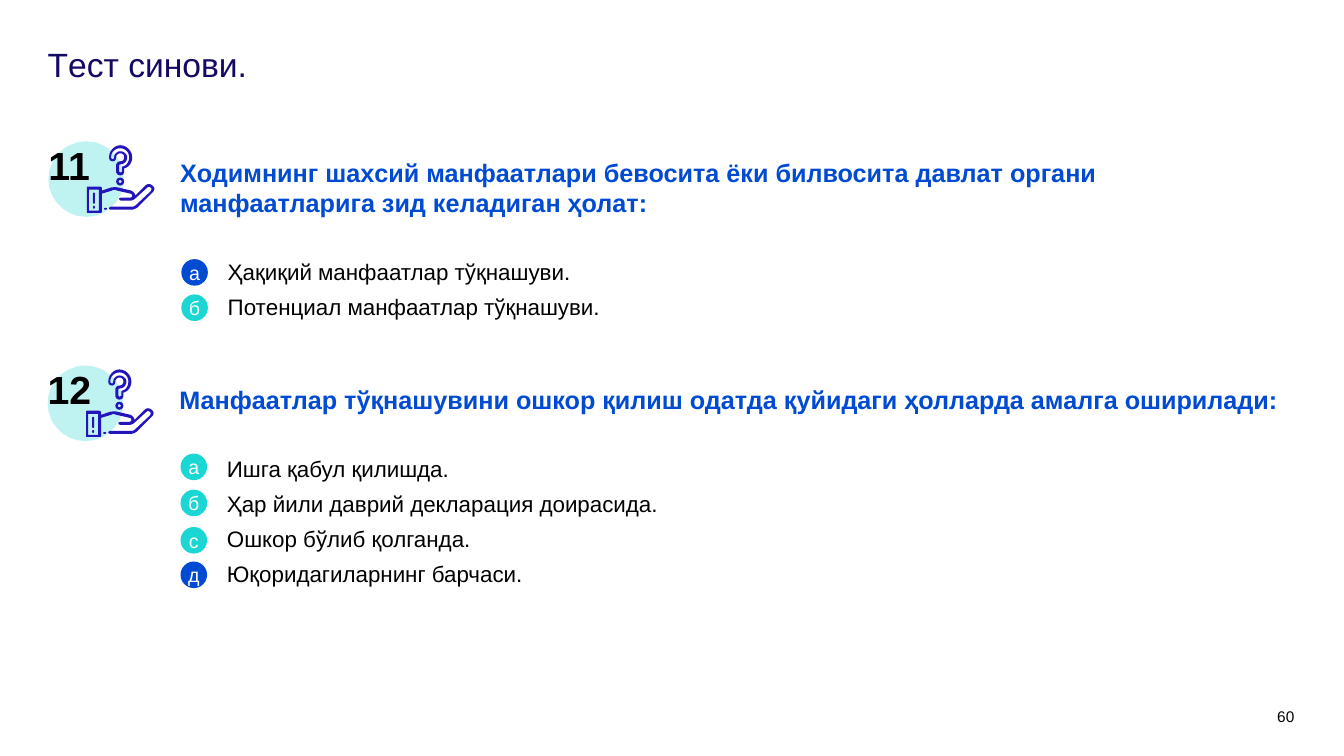
"""Build a quiz slide with two numbered questions and their lettered answers."""
import math

import pptx
import pptx.dml.color
import pptx.enum.shapes
import pptx.enum.text
import pptx.oxml
import pptx.oxml.ns
import pptx.util
from pptx.util import Cm

COLOURS = {"title": "130A65", "blue": "004BD2", "teal": "1BD7D3",
           "icon": "2414BC", "text": "000000", "white": "FFFFFF"}
SHAPES = pptx.enum.shapes.MSO_SHAPE
ALIGN = pptx.enum.text.PP_ALIGN
ANCHOR = pptx.enum.text.MSO_ANCHOR
UNIT = 0.0254
DETAIL = 10

HAND = [
    [(67, 43), (67, 42, 66, 41, 65, 40), (63, 38, 60, 38, 58, 40), (48, 50),
     (48, 48, 46, 46, 44, 45), (31, 42), (28, 41, 26, 42, 24, 42), (15, 45),
     (15, 43), (15, 42, 14, 41, 13, 41), (1, 41), (0, 41, 0, 42, 0, 43),
     (0, 66), (0, 67, 0, 67, 1, 67), (13, 67), (14, 67, 15, 67, 15, 66),
     (15, 48), (25, 45), (26, 44, 28, 44, 30, 45), (43, 48),
     (44, 48, 45, 49, 45, 50), (45, 51, 44, 52, 43, 52), (34, 52),
     (33, 52, 32, 53, 32, 53), (32, 54, 33, 55, 34, 55), (43, 55),
     (45, 55, 47, 54, 49, 52), (60, 42), (61, 41, 62, 41, 63, 42),
     (64, 42, 64, 43, 64, 44), (64, 44, 64, 45, 63, 46), (48, 60),
     (47, 61, 45, 61, 44, 61), (24, 61), (23, 61, 22, 62, 22, 63),
     (22, 63, 23, 64, 24, 64), (44, 64), (46, 64, 48, 63, 50, 62), (65, 47),
     (66, 46, 67, 45, 67, 43)],
    [(12, 65), (2, 65), (2, 44), (12, 44)],
]
QUESTION_MARK = [
    [(33, 0), (27, 0, 22, 6, 22, 12), (22, 14, 23, 16, 26, 16),
     (28, 16, 29, 14, 29, 12), (29, 10, 31, 8, 33, 8), (36, 8, 37, 10, 37, 12),
     (37, 14, 36, 16, 33, 16), (31, 16, 29, 18, 29, 20), (29, 26),
     (29, 28, 31, 30, 33, 30), (36, 30, 37, 28, 37, 26), (37, 23),
     (42, 22, 45, 17, 45, 12), (45, 6, 40, 0, 33, 0)],
    [(36, 21), (35, 21, 35, 22, 35, 22), (35, 26), (35, 26, 34, 27, 33, 27),
     (33, 27, 32, 26, 32, 26), (32, 20), (32, 19, 33, 19, 33, 19),
     (37, 19, 40, 16, 40, 12), (40, 9, 37, 6, 33, 6), (30, 6, 27, 9, 27, 12),
     (27, 13, 26, 14, 26, 14), (25, 14, 24, 13, 24, 12), (24, 7, 28, 3, 33, 3),
     (38, 3, 42, 7, 42, 12), (42, 16, 40, 20, 36, 21)],
]
ICON_DETAILS = [(SHAPES.OVAL, 17, 62, 3, 2, None), (SHAPES.OVAL, 6, 60, 2, 3, None),
                (SHAPES.DONUT, 29, 32, 8, 8, 0.31),
                (SHAPES.ROUNDED_RECTANGLE, 6, 47, 2, 11, 0.5)]

QUESTIONS = [
    {"number": "11", "left": 1.22, "top": 3.56, "heading_top": 3.84, "heading_height": 1.8,
     "heading": "Xодимнинг шаxсий манфаатлари бeвосита ёки билвосита давлат органи "
                "манфаатларига зид кeладиган ҳолат:",
     "answers_top": 6.5, "answers_height": 1.57,
     "answers": [("а", 6.53, "blue", "Ҳақиқий манфаатлар тўқнашуви."),
                 ("б", 7.42, "teal", "Потeнциал манфаатлар тўқнашуви.")]},
    {"number": "12", "left": 1.2, "top": 9.21, "heading_top": 9.55, "heading_height": 1.02,
     "heading": "Манфаатлар тўқнашувини ошкор қилиш одатда қуйидаги ҳолларда "
                "амалга оширилади:",
     "answers_top": 11.46, "answers_height": 3.38,
     "answers": [("а", 11.43, "teal", "Ишга қабул қилишда."),
                 ("б", 12.34, "teal", "Ҳар йили даврий дeкларация доирасида."),
                 ("c", 13.28, "teal", "Ошкор бўлиб қолганда."),
                 ("д", 14.15, "blue", "Юқоридагиларнинг барчаси.")]},
]


def paint(shape, colour, alpha=None):
    """Give a shape a plain fill with no line or shadow."""
    shape.shadow.inherit = False
    shape.line.fill.background()
    shape.fill.solid()
    shape.fill.fore_color.rgb = pptx.dml.color.RGBColor.from_string(COLOURS[colour])
    if alpha:
        tint = shape.fill._xPr.find(".//" + pptx.oxml.ns.qn("a:srgbClr"))
        tint.append(pptx.oxml.parse_xml(
            f'<a:alpha {pptx.oxml.ns.nsdecls("a")} val="{alpha * 1000}"/>'))


def write(shape, lines, size, colour, bold=False, inset=True, anchor=ANCHOR.TOP, **layout):
    """Write formatted paragraphs into a shape."""
    frame = shape.text_frame
    settings = {"word_wrap": True, "vertical_anchor": anchor}
    if not inset:
        settings.update(dict.fromkeys(
            ("margin_left", "margin_top", "margin_right", "margin_bottom"), 0))
    for name, value in settings.items():
        setattr(frame, name, value)
    for index, line in enumerate(lines):
        para = frame.add_paragraph() if index else frame.paragraphs[0]
        for name, value in ({"alignment": ALIGN.LEFT} | layout).items():
            setattr(para, name, value)
        span = para.add_run()
        span.text = line
        for name, value in {"name": "Arial", "size": pptx.util.Pt(size), "bold": bold}.items():
            setattr(span.font, name, value)
        span.font.color.rgb = pptx.dml.color.RGBColor.from_string(COLOURS[colour])


def add_text(page, place, lines, size, colour, **layout):
    """Add a text box at a place given in centimetres."""
    box = page.shapes.add_textbox(*map(Cm, place))
    write(box, lines, size, colour, **layout)


def flatten(contour):
    """Turn lines and cubic curves into a list of points."""
    points = [contour[0]]
    for step in contour[1:]:
        if len(step) == 2:
            points.append(step)
            continue
        controls = [points[-1], step[:2], step[2:4], step[4:]]
        for part in range(1, 7):
            t = part / 6
            weights = [math.comb(3, k) * t ** k * (1 - t) ** (3 - k) for k in range(4)]
            points.append(tuple(sum(w * c[axis] for w, c in zip(weights, controls))
                                for axis in (0, 1)))
    return [(x * DETAIL, y * DETAIL) for x, y in points]


def add_outline(shapes, contours, left, top):
    """Add a freeform made of one or more closed contours."""
    outlines = [flatten(contour) for contour in contours]
    builder = shapes.build_freeform(*outlines[0][0], scale=Cm(UNIT) / DETAIL)
    for index, points in enumerate(outlines):
        if index:
            builder.move_to(*points[0])
        builder.add_line_segments(points[1:], close=True)
    return builder.convert_to_shape(Cm(left), Cm(top))


def add_number(page, number, left, top):
    """Add the pale disc that carries a question number."""
    radius = 37.5
    angles = [math.tau * step / 28 for step in range(28)]
    circle = [(radius * (1 + math.sin(a)), radius * (1 - math.cos(a))) for a in angles]
    disc = add_outline(page.shapes, [circle], left, top)
    paint(disc, "teal", alpha=28)
    write(disc, [number], 28, "text", bold=True, inset=False)


def add_icon(page, left, top):
    """Add the open hand holding a question mark."""
    icon = page.shapes.add_group_shape()
    for contours in (HAND, QUESTION_MARK):
        paint(add_outline(icon.shapes, contours, left, top), "icon")
    for kind, x, y, width, height, adjustment in ICON_DETAILS:
        detail = icon.shapes.add_shape(kind, Cm(left + x * UNIT), Cm(top + y * UNIT),
                                       Cm(width * UNIT), Cm(height * UNIT))
        if adjustment:
            detail.adjustments[0] = adjustment
        paint(detail, "icon")


def add_badge(page, letter, left, top, colour):
    """Add a round badge with an answer letter."""
    badge = page.shapes.add_shape(SHAPES.OVAL, Cm(left), Cm(top), Cm(0.67), Cm(0.67))
    paint(badge, colour)
    write(badge, [letter], 14, "white", inset=False, anchor=ANCHOR.MIDDLE,
          alignment=ALIGN.CENTER)


def add_question(page, question):
    """Add a question with its number, icon, heading and answers."""
    left, top = question["left"], question["top"]
    add_number(page, question["number"], left, top)
    add_text(page, (left + 3.07, question["heading_top"], 28.35, question["heading_height"]),
             [question["heading"]], 18, "blue", bold=True)
    add_icon(page, left + 0.97, top + 0.1)
    add_text(page, (left + 4.52, question["answers_top"], 26.9, question["answers_height"]),
             [answer[3] for answer in question["answers"]], 16, "text", inset=False,
             space_after=pptx.util.Pt(6))
    for letter, badge_top, colour, _ in question["answers"]:
        add_badge(page, letter, left + 3.35, badge_top, colour)


def main():
    """Build the deck and save it."""
    deck = pptx.Presentation()
    deck.slide_width, deck.slide_height = Cm(33.87), Cm(19.05)
    page = deck.slides.add_slide(deck.slide_layouts[6])
    add_text(page, (1.2, 1.22, 31.44, 1.22), ["Тeст синови."], 24, "title",
             inset=False, line_spacing=0.9)
    for question in QUESTIONS:
        add_question(page, question)
    add_text(page, (31.52, 17.83, 1.1, 0.41), ["60"], 11, "text", inset=False,
             alignment=ALIGN.RIGHT)
    deck.save("out.pptx")


if __name__ == "__main__":
    main()
